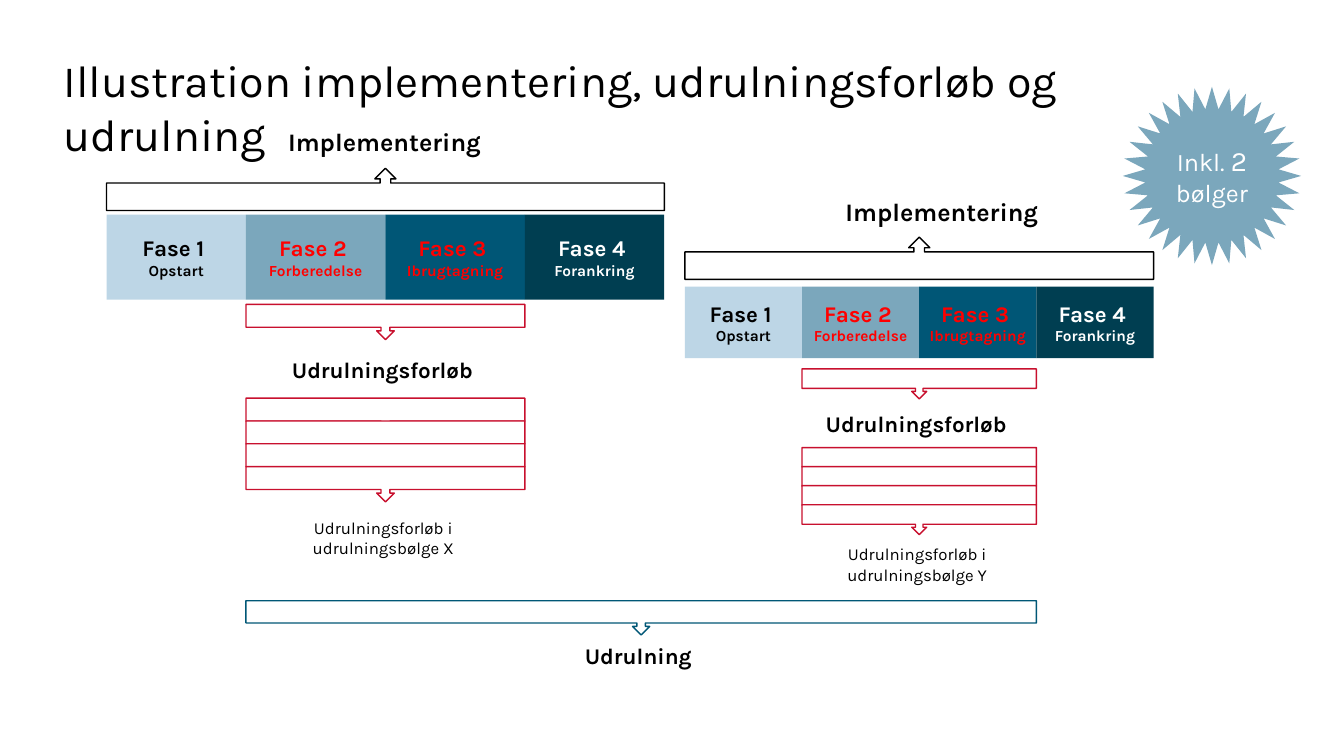
"""Build the slide on implementation, rollout courses and rollout in two waves."""
from pptx import Presentation
from pptx.dml.color import RGBColor
from pptx.enum.shapes import MSO_SHAPE
from pptx.enum.text import MSO_ANCHOR, MSO_AUTO_SIZE, PP_ALIGN
from pptx.util import Pt

FONT = "Karla"
BLACK, WHITE, RED, CRIMSON, BLUE = "000000", "FFFFFF", "FF0000", "C8102E", "005776"
TITLE = "Illustration implementering, udrulningsforløb og udrulning"
PHASES = [
    ("Fase 1 ", "Opstart", "BDD6E6", BLACK),
    ("Fase 2 ", "Forberedelse", "7BA7BC", RED),
    ("Fase 3 ", "Ibrugtagning", "005676", RED),
    ("Fase 4 ", "Forankring", "003E51", WHITE),
]
WAVES = [
    dict(name="X", left=76.1, col=99.6, label_mid=274.7, label_top=87, bar_top=120.2,
         phase_top=153.4, phase_h=60.6, course_top=217.4, course_h=25.2,
         course_label_top=249, stack_top=284.4, step=16.3, note_top=366.5, text_w=190.8),
    dict(name="Y", left=489.2, col=83.7, label_mid=672.8, label_top=136.8, bar_top=169.4,
         phase_top=204.7, phase_h=51.2, course_top=263.5, course_h=21.4,
         course_label_top=287.3, stack_top=319.7, step=13.6, note_top=385.2, text_w=160.6),
]
BAR_H, STACK = 30.2, 4


def rgb(value):
    return RGBColor.from_string(value)


def write(tf, paragraphs, color=BLACK, align=PP_ALIGN.CENTER):
    tf.word_wrap = True
    for i, runs in enumerate(paragraphs):
        p = tf.paragraphs[0] if i == 0 else tf.add_paragraph()
        p.alignment = align
        for text, size, bold in runs:
            r = p.add_run()
            r.text = text
            r.font.name, r.font.size, r.font.bold = FONT, Pt(size), bold
            r.font.color.rgb = rgb(color)


def shape(parent, kind, box, fill, line=None):
    sp = parent.add_shape(kind, *map(Pt, box))
    sp.shadow.inherit = False
    sp.fill.solid()
    sp.fill.fore_color.rgb = rgb(fill)
    if line:
        sp.line.color.rgb = rgb(line)
        sp.line.width = Pt(1)
    else:
        sp.line.fill.background()
    return sp


def label(mid, top, width, height, paragraphs):
    sp = s.shapes.add_textbox(Pt(mid - width / 2), Pt(top), Pt(width), Pt(height))
    write(sp.text_frame, paragraphs)


def course(left, top, width, height):
    sp = shape(s.shapes, MSO_SHAPE.UP_ARROW_CALLOUT, (left, top, width, height), WHITE, CRIMSON)
    sp.rotation = 180


def wave(name, left, col, label_mid, label_top, bar_top, phase_top, phase_h, course_top,
         course_h, course_label_top, stack_top, step, note_top, text_w):
    mid = left + 2 * col
    shape(s.shapes, MSO_SHAPE.UP_ARROW_CALLOUT, (left, bar_top, 4 * col, BAR_H), WHITE, BLACK)
    label(label_mid, label_top, text_w, 29, [[("Implementering", 18, True)]])
    group = s.shapes.add_group_shape()
    for i, (phase, step_name, fill, color) in enumerate(PHASES):
        sp = shape(group.shapes, MSO_SHAPE.RECTANGLE,
                   (left + i * col, phase_top, col, phase_h), fill)
        sp.text_frame.vertical_anchor = MSO_ANCHOR.MIDDLE
        write(sp.text_frame, [[(phase, 16, True)], [(step_name, 11, True)]], color)
    for top in [course_top] + [stack_top + i * step for i in range(STACK)]:
        course(left + col, top, 2 * col, course_h)
    label(mid, course_label_top, text_w, 29,
          [[("Udrulningsforløb", 16, True), (" ", 18, False)]])
    label(mid, note_top, text_w, 36,
          [[("Udrulningsforløb i ", 12, False)], [(f"udrulningsbølge {name} ", 12, False)]])


prs = Presentation()
prs.slide_width, prs.slide_height = Pt(960), Pt(540)
s = prs.slides.add_slide(prs.slide_layouts[5])

title = s.shapes.title
title.left, title.top, title.width, title.height = Pt(38.2), Pt(34), Pt(863.3), Pt(46)
tf = title.text_frame
tf.auto_size, tf.vertical_anchor = MSO_AUTO_SIZE.NONE, MSO_ANCHOR.TOP
write(tf, [[(TITLE, 32, False)]], align=PP_ALIGN.LEFT)

star = shape(s.shapes, MSO_SHAPE.STAR_32_POINT, (802, 62, 127.4, 127.4), "7BA7BC")
star.text_frame.vertical_anchor = MSO_ANCHOR.MIDDLE
write(star.text_frame, [[("Inkl. ", 18, False), ("2", 20, False), (" bølger", 18, False)]], WHITE)

for w in WAVES:
    wave(**w)

rollout_left = WAVES[0]["left"] + WAVES[0]["col"]
rollout_right = WAVES[1]["left"] + 3 * WAVES[1]["col"]
shape(s.shapes, MSO_SHAPE.DOWN_ARROW_CALLOUT,
      (rollout_left, 429.1, rollout_right - rollout_left, 24.5), WHITE, BLUE)
label((rollout_left + rollout_right) / 2, 455, 198.7, 26.6, [[("Udrulning ", 16, True)]])

prs.save("out.pptx")
